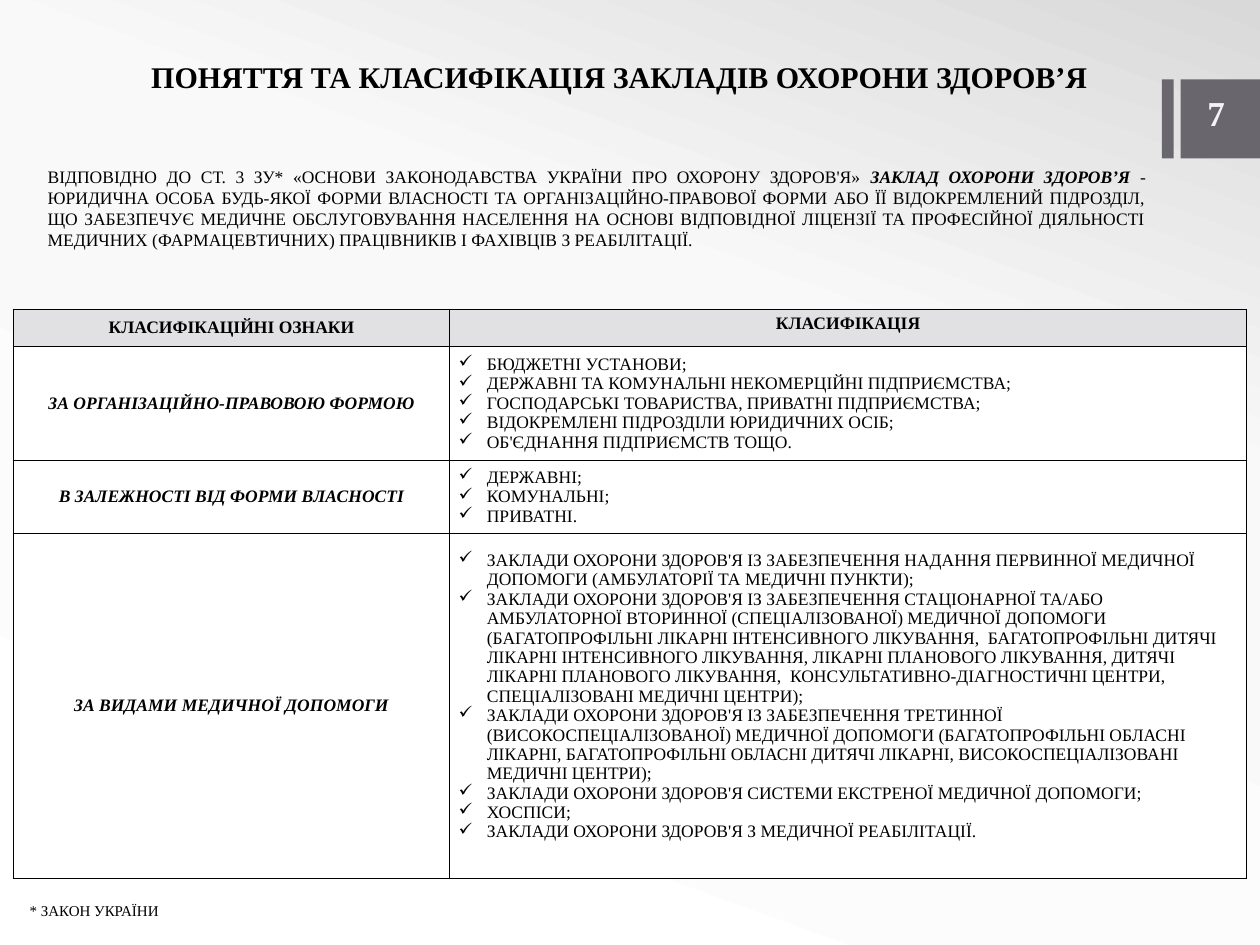
"""Build a slide on the notion and classes of health care institutions."""
from copy import deepcopy
from dataclasses import dataclass, field

from lxml import etree
from pptx import Presentation
from pptx.dml.color import RGBColor
from pptx.enum.shapes import MSO_SHAPE
from pptx.enum.text import MSO_ANCHOR, PP_ALIGN
from pptx.oxml.ns import qn
from pptx.util import Pt

RECT = MSO_SHAPE.RECTANGLE
TOP, MIDDLE = MSO_ANCHOR.TOP, MSO_ANCHOR.MIDDLE
LEFT, CENTER, JUSTIFY = PP_ALIGN.LEFT, PP_ALIGN.CENTER, PP_ALIGN.JUSTIFY

FONT = "Times New Roman"
HEX = {
    "ink": "000000", "tab": "69676D", "number": "F4F3F6",
    "head": "E1E0E2", "body": "FFFFFF",
}
FADE = [(0, "D9D9D9"), (0.34, "F9F9F9"), (1, "FFFFFF")]
BOLD = {"bold": True}
LABEL = {"bold": True, "italic": True}
COLS = [349, 637.4]
ROWS = [29.4, 91.4, 58.4, 276]


@dataclass
class Note:
    box: tuple[float, ...]
    runs: list[tuple[str, dict]]
    size: float
    align: PP_ALIGN = LEFT
    color: str = "ink"
    pad: tuple[float, float] = (7.2, 3.6)
    space: float | None = None


@dataclass
class Cell:
    lines: list[str]
    style: dict = field(default_factory=dict)
    fill: str = "body"
    anchor: MSO_ANCHOR = MIDDLE
    ticks: bool = False
    foot: float = 3.6


TABS = [(929.6, 63.4, 9.4, 63.4), (944.6, 63.4, 63.4, 63.4)]

NOTES = [
    Note((956, 68.4, 52, 44), [("7", BOLD)], 28, color="number", pad=(10, 5)),
    Note((50.4, 43.2, 890, 36),
         [("ПОНЯТТЯ ТА КЛАСИФІКАЦІЯ ЗАКЛАДІВ ОХОРОНИ ЗДОРОВ’Я", BOLD)], 24, CENTER),
    Note((31, 128.9, 892.8, 74.9), [
        ("ВІДПОВІДНО ДО СТ. 3 ЗУ* «ОСНОВИ ЗАКОНОДАВСТВА УКРАЇНИ ПРО ОХОРОНУ ЗДОРОВ'Я» ", {}),
        ("ЗАКЛАД ОХОРОНИ ЗДОРОВ’Я ", LABEL),
        ("- ЮРИДИЧНА ОСОБА БУДЬ-ЯКОЇ ФОРМИ ВЛАСНОСТІ ТА ОРГАНІЗАЦІЙНО-ПРАВОВОЇ ФОРМИ "
         "АБО ЇЇ ВІДОКРЕМЛЕНИЙ ПІДРОЗДІЛ, ЩО ЗАБЕЗПЕЧУЄ МЕДИЧНЕ ОБСЛУГОВУВАННЯ НАСЕЛЕННЯ "
         "НА ОСНОВІ ВІДПОВІДНОЇ ЛІЦЕНЗІЇ ТА ПРОФЕСІЙНОЇ ДІЯЛЬНОСТІ МЕДИЧНИХ "
         "(ФАРМАЦЕВТИЧНИХ) ПРАЦІВНИКІВ І ФАХІВЦІВ З РЕАБІЛІТАЦІЇ.", {}),
    ], 14, JUSTIFY, space=16.85),
    Note((16.6, 717.8, 128.2, 21.6), [("* ЗАКОН УКРАЇНИ", {})], 12),
]

GRID = [
    [Cell(["КЛАСИФІКАЦІЙНІ ОЗНАКИ"], BOLD, "head"),
     Cell(["КЛАСИФІКАЦІЯ"], BOLD, "head", TOP)],
    [Cell(["ЗА ОРГАНІЗАЦІЙНО-ПРАВОВОЮ ФОРМОЮ"], LABEL),
     Cell(["БЮДЖЕТНІ УСТАНОВИ;",
           "ДЕРЖАВНІ ТА КОМУНАЛЬНІ НЕКОМЕРЦІЙНІ ПІДПРИЄМСТВА;",
           "ГОСПОДАРСЬКІ ТОВАРИСТВА, ПРИВАТНІ ПІДПРИЄМСТВА;",
           "ВІДОКРЕМЛЕНІ ПІДРОЗДІЛИ ЮРИДИЧНИХ ОСІБ;",
           "ОБ'ЄДНАННЯ ПІДПРИЄМСТВ ТОЩО."], ticks=True)],
    [Cell(["В ЗАЛЕЖНОСТІ ВІД ФОРМИ ВЛАСНОСТІ"], LABEL),
     Cell(["ДЕРЖАВНІ;", "КОМУНАЛЬНІ;", "ПРИВАТНІ."], ticks=True)],
    [Cell(["ЗА ВИДАМИ МЕДИЧНОЇ ДОПОМОГИ"], LABEL),
     Cell(["ЗАКЛАДИ ОХОРОНИ ЗДОРОВ'Я ІЗ ЗАБЕЗПЕЧЕННЯ НАДАННЯ ПЕРВИННОЇ МЕДИЧНОЇ "
           "ДОПОМОГИ (АМБУЛАТОРІЇ ТА МЕДИЧНІ ПУНКТИ);",
           "ЗАКЛАДИ ОХОРОНИ ЗДОРОВ'Я ІЗ ЗАБЕЗПЕЧЕННЯ СТАЦІОНАРНОЇ ТА/АБО АМБУЛАТОРНОЇ "
           "ВТОРИННОЇ (СПЕЦІАЛІЗОВАНОЇ) МЕДИЧНОЇ ДОПОМОГИ (БАГАТОПРОФІЛЬНІ ЛІКАРНІ "
           "ІНТЕНСИВНОГО ЛІКУВАННЯ,  БАГАТОПРОФІЛЬНІ ДИТЯЧІ ЛІКАРНІ ІНТЕНСИВНОГО "
           "ЛІКУВАННЯ, ЛІКАРНІ ПЛАНОВОГО ЛІКУВАННЯ, ДИТЯЧІ ЛІКАРНІ ПЛАНОВОГО ЛІКУВАННЯ,  "
           "КОНСУЛЬТАТИВНО-ДІАГНОСТИЧНІ ЦЕНТРИ,  СПЕЦІАЛІЗОВАНІ МЕДИЧНІ ЦЕНТРИ);",
           "ЗАКЛАДИ ОХОРОНИ ЗДОРОВ'Я ІЗ ЗАБЕЗПЕЧЕННЯ ТРЕТИННОЇ "
           "(ВИСОКОСПЕЦІАЛІЗОВАНОЇ) МЕДИЧНОЇ ДОПОМОГИ (БАГАТОПРОФІЛЬНІ ОБЛАСНІ ЛІКАРНІ, "
           "БАГАТОПРОФІЛЬНІ ОБЛАСНІ ДИТЯЧІ ЛІКАРНІ, ВИСОКОСПЕЦІАЛІЗОВАНІ МЕДИЧНІ ЦЕНТРИ);",
           "ЗАКЛАДИ ОХОРОНИ ЗДОРОВ'Я СИСТЕМИ ЕКСТРЕНОЇ МЕДИЧНОЇ ДОПОМОГИ;",
           "ХОСПІСИ;",
           "ЗАКЛАДИ ОХОРОНИ ЗДОРОВ'Я З МЕДИЧНОЇ РЕАБІЛІТАЦІЇ."], ticks=True, foot=19)],
]


def apply(item, form: dict) -> None:
    for name, value in form.items():
        setattr(item, name, value)


def tint(code: str) -> RGBColor:
    return RGBColor.from_string(code)


def add_run(para, text: str, size: float, color: str, style: dict) -> None:
    run = para.add_run()
    run.text = text
    base = {"name": FONT, "size": Pt(size), "bold": False, "italic": False}
    apply(run.font, base | style)
    run.font.color.rgb = tint(HEX[color])


def paint_back(slide) -> None:
    fill = slide.background.fill
    fill.gradient()
    fill.gradient_angle = 250
    stops = slide.element.find(".//" + qn("a:gsLst"))
    stops.append(deepcopy(stops[-1]))
    for stop, (place, code) in zip(fill.gradient_stops, FADE):
        stop.position = place
        stop.color.rgb = tint(code)


def draw_tab(slide, box: tuple[float, ...]) -> None:
    tab = slide.shapes.add_shape(RECT, *map(Pt, box))
    tab.shadow.inherit = False
    tab.fill.solid()
    tab.fill.fore_color.rgb = tint(HEX["tab"])
    tab.line.fill.background()


def draw_note(slide, note: Note) -> None:
    frame = slide.shapes.add_textbox(*map(Pt, note.box)).text_frame
    side, edge = map(Pt, note.pad)
    apply(frame, {"word_wrap": True, "margin_left": side, "margin_right": side,
                  "margin_top": edge, "margin_bottom": edge})
    para = frame.paragraphs[0]
    para.alignment = note.align
    if note.space:
        para.line_spacing = Pt(note.space)
    for text, style in note.runs:
        add_run(para, text, note.size, note.color, style)


def add_tick(para) -> None:
    props = para._p.get_or_add_pPr()
    props.set("marL", str(Pt(22.5)))
    props.set("indent", str(-Pt(22.5)))
    etree.SubElement(props, qn("a:buChar"), char="✓")


def add_edges(cell) -> None:
    props = cell._tc.get_or_add_tcPr()
    for side in "LRTB":
        line = etree.SubElement(props, qn("a:ln" + side), w=str(Pt(1)))
        fill = etree.SubElement(line, qn("a:solidFill"))
        etree.SubElement(fill, qn("a:srgbClr"), val=HEX["ink"])


def fill_cell(cell, data: Cell) -> None:
    add_edges(cell)
    cell.fill.solid()
    cell.fill.fore_color.rgb = tint(HEX[data.fill])
    apply(cell, {"vertical_anchor": data.anchor, "margin_left": Pt(7.2),
                 "margin_right": Pt(7.2), "margin_top": Pt(3.6),
                 "margin_bottom": Pt(data.foot)})
    frame = cell.text_frame
    for index, text in enumerate(data.lines):
        para = frame.add_paragraph() if index else frame.paragraphs[0]
        apply(para, {"alignment": LEFT if data.ticks else CENTER,
                     "line_spacing": Pt(15.5)})
        if data.ticks:
            add_tick(para)
        add_run(para, text, 14, "ink", data.style)


def draw_grid(slide) -> None:
    box = map(Pt, (10.8, 247.6, sum(COLS), sum(ROWS)))
    table = slide.shapes.add_table(len(ROWS), len(COLS), *box).table
    apply(table, {"first_row": False, "horz_banding": False})
    for col, width in zip(table.columns, COLS):
        col.width = Pt(width)
    for row, height, line in zip(table.rows, ROWS, GRID):
        row.height = Pt(height)
        for cell, data in zip(row.cells, line):
            fill_cell(cell, data)


def main() -> None:
    deck = Presentation()
    apply(deck, {"slide_width": Pt(1008), "slide_height": Pt(756)})
    slide = deck.slides.add_slide(deck.slide_layouts[6])
    paint_back(slide)
    for box in TABS:
        draw_tab(slide, box)
    for note in NOTES:
        draw_note(slide, note)
    draw_grid(slide)
    deck.save("out.pptx")


if __name__ == "__main__":
    main()
